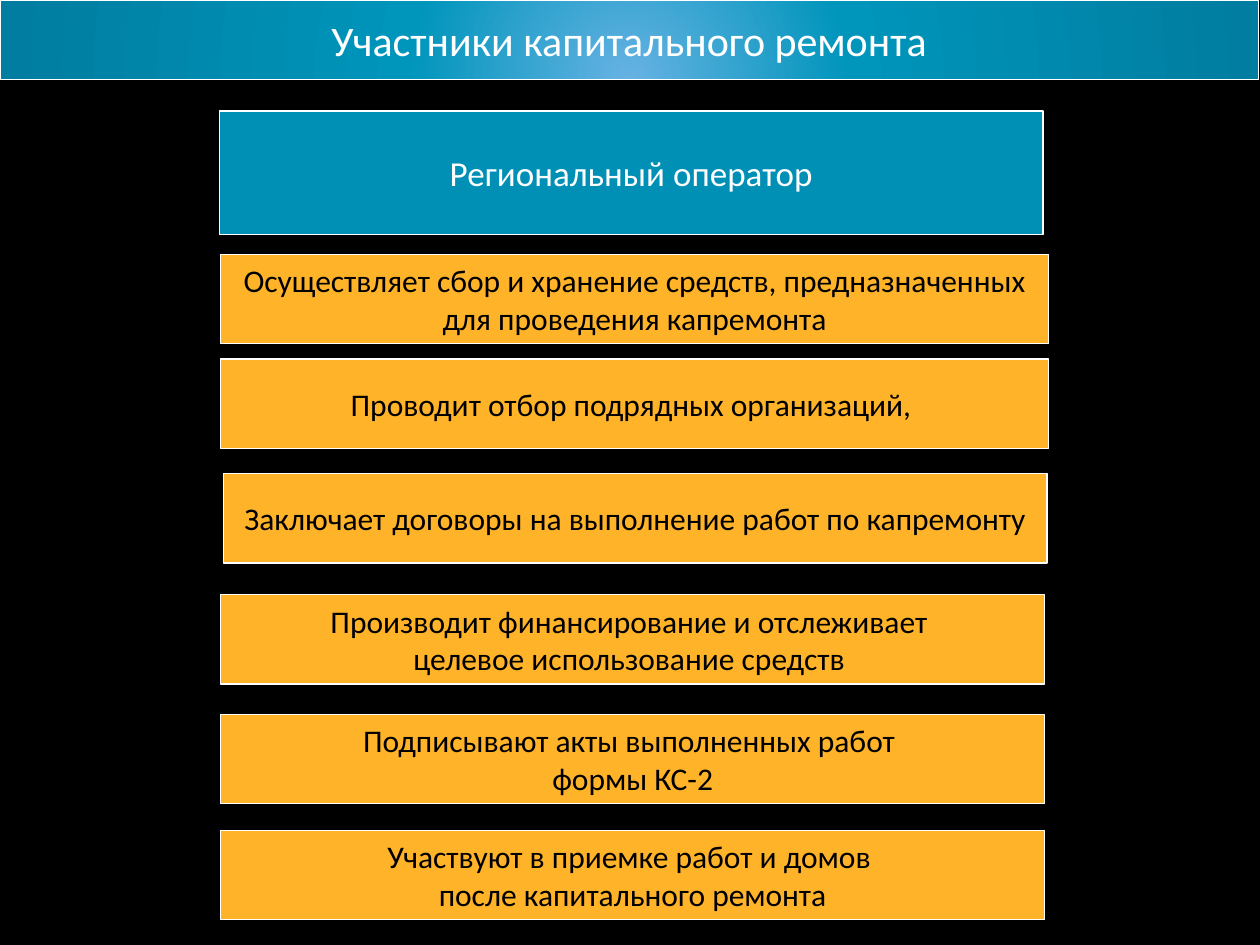
"""Build a slide on the regional operator's part in capital repairs."""
import dataclasses

import pptx
import pptx.dml.color
import pptx.enum.shapes
import pptx.enum.text
import pptx.oxml
import pptx.oxml.ns
import pptx.util

Cm = pptx.util.Cm


@dataclasses.dataclass(frozen=True)
class Theme:
    """Hold the colours, font and type sizes."""
    back: str = "000000"
    light: str = "FFFFFF"
    dark: str = "000000"
    teal: str = "008FB5"
    amber: str = "FFB329"
    glow: tuple = ((0, "66B2E3"), (35, "0095BB"), (100, "007DA0"))
    font: str = "Calibri"
    title: int = 24
    head: int = 20
    body: int = 18


THEME = Theme()
LEFT, HIGH = 4.45, 1.8
DUTIES = (
    (LEFT, 5.13, 16.69, "Осуществляет сбор и хранение средств, предназначенных для проведения капремонта"),
    (LEFT, 7.24, 16.69, "Проводит отбор подрядных организаций, "),
    (4.5, 9.55, 16.61, "Заключает договоры на выполнение работ по капремонту"),
    (LEFT, 11.99, 16.61, "Производит финансирование и отслеживает \nцелевое использование средств "),
    (LEFT, 14.4, 16.61, "Подписывают акты выполненных работ \nформы КС-2"),
    (LEFT, 16.74, 16.61, "Участвуют в приемке работ и домов \nпосле капитального ремонта"),
)


def rgb(code):
    """Turn a hex code into a colour."""
    return pptx.dml.color.RGBColor.from_string(code)


def add_box(slide, area, text, fill, ink, size):
    """Add a white-edged box with centred text."""
    kind = pptx.enum.shapes.MSO_SHAPE.RECTANGLE
    box = slide.shapes.add_shape(kind, *map(Cm, area))
    box.shadow.inherit = False
    box.fill.solid()
    box.fill.fore_color.rgb = rgb(fill)
    box.line.color.rgb = rgb(THEME.light)
    box.line.width = pptx.util.Pt(0.75)
    frame = box.text_frame
    frame.word_wrap = True
    frame.vertical_anchor = pptx.enum.text.MSO_ANCHOR.MIDDLE
    frame.text = text
    for para in frame.paragraphs:
        para.alignment = pptx.enum.text.PP_ALIGN.CENTER
        para.font.name = THEME.font
        para.font.size = pptx.util.Pt(size)
        para.font.color.rgb = rgb(ink)
    return box


def add_glow(box, stops):
    """Swap the solid fill for a round glow from the bottom centre."""
    marks = "".join(
        f'<a:gs pos="{pos * 1000}"><a:srgbClr val="{code}"/></a:gs>'
        for pos, code in stops
    )
    grad = pptx.oxml.parse_xml(
        f'<a:gradFill {pptx.oxml.ns.nsdecls("a")} rotWithShape="1">'
        f'<a:gsLst>{marks}</a:gsLst><a:path path="circle">'
        '<a:fillToRect l="50000" t="100000" r="50000" b="0"/>'
        '</a:path></a:gradFill>'
    )
    props = box.element.spPr
    props.replace(props.find(pptx.oxml.ns.qn("a:solidFill")), grad)


def main():
    """Build and save the slide."""
    deck = pptx.Presentation()
    deck.slide_width, deck.slide_height = Cm(25.4), Cm(19.05)
    slide = deck.slides.add_slide(deck.slide_layouts[6])
    slide.background.fill.solid()
    slide.background.fill.fore_color.rgb = rgb(THEME.back)

    add_box(slide, (4.42, 2.24, 16.61, 2.49), "Региональный оператор",
            THEME.teal, THEME.light, THEME.head)
    title = add_box(slide, (0, 0, 25.37, 1.6), "Участники капитального ремонта",
                    THEME.teal, THEME.light, THEME.title)
    add_glow(title, THEME.glow)
    for left, top, width, text in DUTIES:
        add_box(slide, (left, top, width, HIGH), text,
                THEME.amber, THEME.dark, THEME.body)
    deck.save("out.pptx")


if __name__ == "__main__":
    main()
